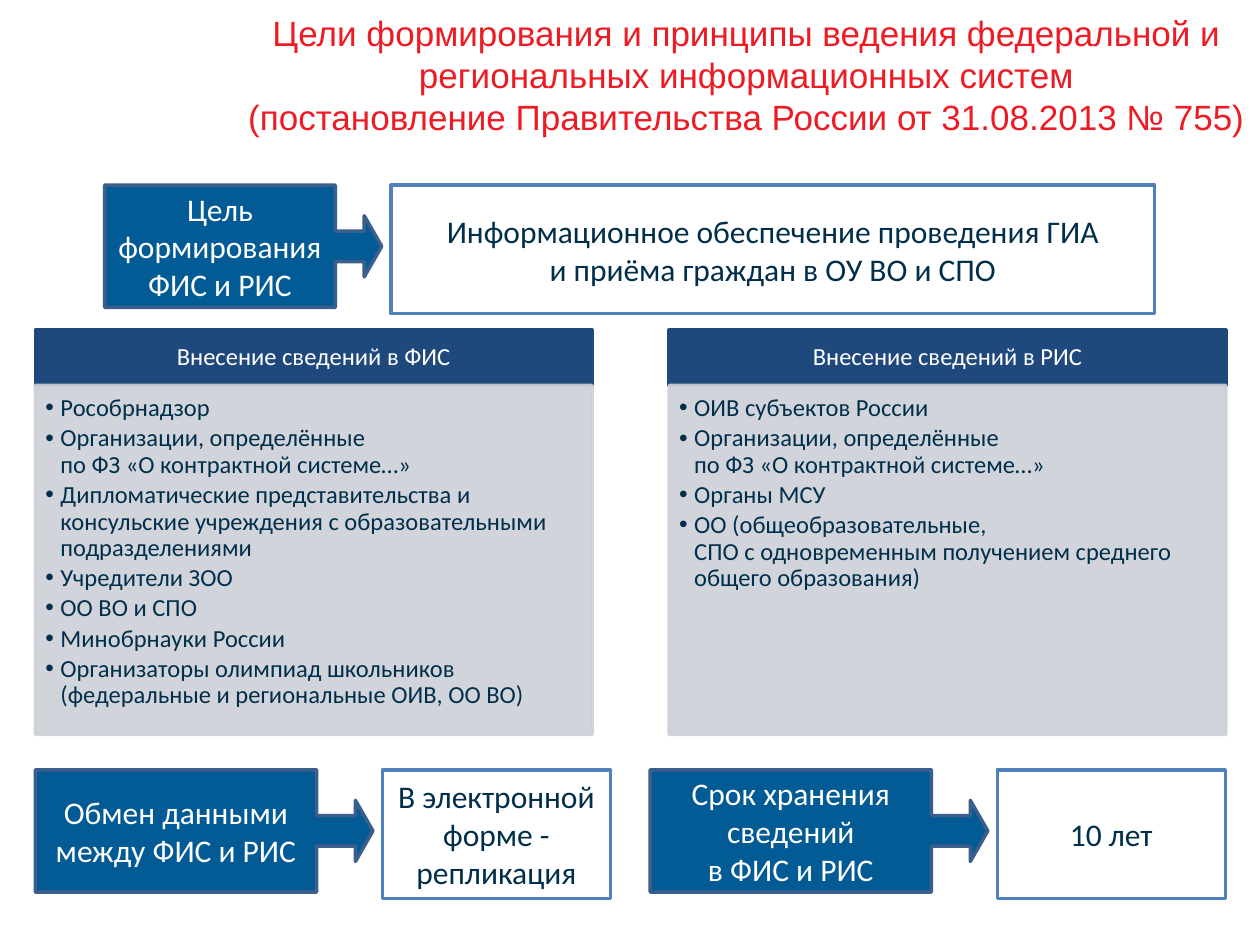
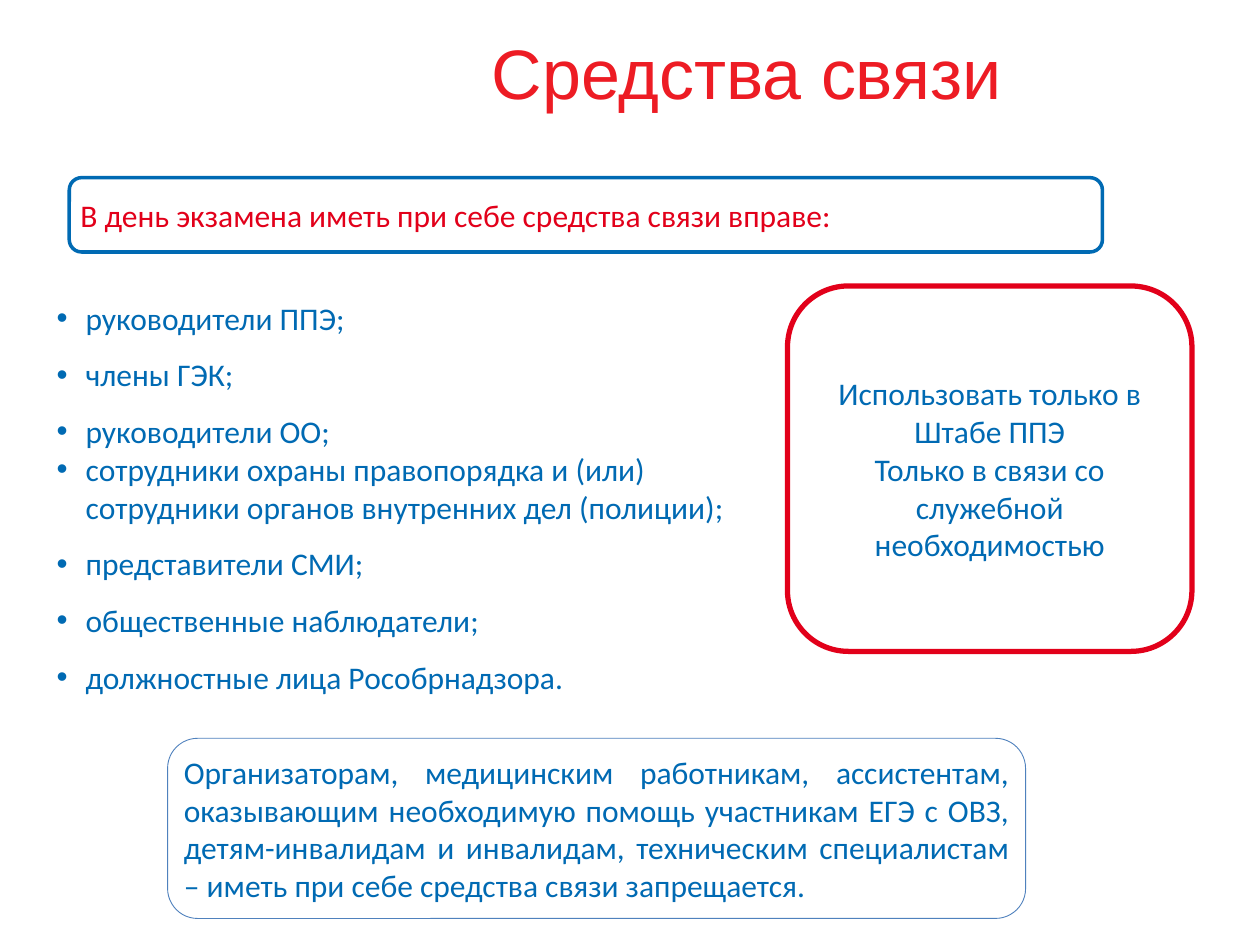
"""Build two slides on exam information systems and the use of phones."""
import copy

import pptx
import pptx.dml.color
import pptx.enum.shapes
import pptx.enum.text
import pptx.oxml.ns
import pptx.util
from lxml import etree

SHAPES = pptx.enum.shapes.MSO_SHAPE
ALIGN = pptx.enum.text.PP_ALIGN
ANCHOR = pptx.enum.text.MSO_ANCHOR
QN = pptx.oxml.ns.qn

RED = "ED1C24"
CRIMSON = "E2001A"
BLUE = "006AB3"
BORDER = "4F81BD"
INK = "012F4B"
WHITE = "FFFFFF"
CALLOUT = {"kind": SHAPES.RIGHT_ARROW_CALLOUT, "fill": "025B94", "line": "3A5F8C"}
ANSWER = {"fill": WHITE, "line": BORDER, "color": INK}
HEADER = {"fill": "1F497D", "line": "1F497D", "size": 14, "spacing": 0.9,
          "insets": (0.11, 0.06, 0.11, 0.06)}
LISTING = {"fill": "CDD0D7", "line": "CDD0D7", "opacity": 90, "color": INK, "size": 14,
           "spacing": 0.9, "after": 2.1, "bullet": 0.12, "align": ALIGN.LEFT,
           "anchor": ANCHOR.TOP, "insets": (0.08, 0.08, 0.11, 0.12)}
ROUNDED = {"kind": SHAPES.ROUNDED_RECTANGLE, "color": BLUE, "insets": (0.06, 0.03, 0.06, 0.03)}
TITLE = {"color": RED, "font": "Arial"}

presentation = pptx.Presentation()
presentation.slide_width = pptx.util.Inches(10)
presentation.slide_height = pptx.util.Inches(7.5)
COLUMN = ROW = presentation.slide_width / 100


def rgb(value):
    return pptx.dml.color.RGBColor.from_string(value)


def add_box(slide, left, top, width, height, paragraphs, kind=SHAPES.RECTANGLE, fill=None,
            line=None, weight=2, opacity=100, color=WHITE, size=18, font="Calibri",
            align=ALIGN.CENTER, anchor=ANCHOR.MIDDLE, insets=(0.1, 0.05, 0.1, 0.05),
            spacing=1, after=0, bullet=0):
    place = [round(left * COLUMN), round(top * ROW), round(width * COLUMN), round(height * ROW)]
    if fill or line:
        shape = slide.shapes.add_shape(kind, *place)
        shape.shadow.inherit = False
    else:
        shape = slide.shapes.add_textbox(*place)
    if fill:
        shape.fill.solid()
        shape.fill.fore_color.rgb = rgb(fill)
    else:
        shape.fill.background()
    if line:
        shape.line.color.rgb = rgb(line)
        shape.line.width = pptx.util.Pt(weight)
    if opacity < 100:
        for tint in shape._element.spPr.iter(QN("a:srgbClr")):
            etree.SubElement(tint, QN("a:alpha"), val=str(opacity * 1000))
    frame = shape.text_frame
    frame.word_wrap = True
    frame.vertical_anchor = anchor
    for side, inset in zip(("left", "top", "right", "bottom"), insets):
        setattr(frame, f"margin_{side}", pptx.util.Inches(inset))
    for index, text in enumerate(paragraphs):
        paragraph = frame.add_paragraph() if index else frame.paragraphs[0]
        paragraph.text = text
        if bullet:
            properties = paragraph._p.get_or_add_pPr()
            indent = pptx.util.Inches(bullet)
            properties.set("marL", str(indent))
            properties.set("indent", str(-indent))
            etree.SubElement(properties, QN("a:buFont"), typeface="Arial")
            etree.SubElement(properties, QN("a:buChar"), char="•")
        line_spacing = spacing[index] if isinstance(spacing, list) else spacing
        layout = {"alignment": align, "line_spacing": float(line_spacing),
                  "space_before": pptx.util.Pt(0), "space_after": pptx.util.Pt(after)}
        for name, value in layout.items():
            setattr(paragraph, name, value)
        for run in paragraph.runs:
            for name, value in {"name": font, "size": pptx.util.Pt(size)}.items():
                setattr(run.font, name, value)
            run.font.color.rgb = rgb(color)
        for line_break in paragraph._p.findall(QN("a:br")):
            line_break.append(copy.deepcopy(paragraph.runs[0]._r.rPr))
    return shape


blank = presentation.slide_layouts[6]
systems = presentation.slides.add_slide(blank)
add_box(systems, 18.5, 0, 81.5, 11.8, [
    "Цели формирования и принципы ведения федеральной и региональных информационных систем\n"
    "(постановление Правительства России от 31.08.2013 № 755)"], size=20, **TITLE)

facts = [
    (8.3, 14.7, 22, 60.6, "Цель формирования ФИС и РИС",
     "Информационное обеспечение проведения ГИА\nи приёма граждан в ОУ ВО и СПО"),
    (2.8, 61.1, 26.8, 18.1, "Обмен данными между ФИС и РИС", "В электронной форме - репликация"),
    (51.6, 61.1, 26.8, 18.1, "Срок хранения сведений\nв ФИС и РИС", "10 лет"),
]
for left, top, callout_width, answer_width, question, answer in facts:
    callout = add_box(systems, left, top, callout_width, 9.7, [question], **CALLOUT)
    for index, adjustment in enumerate((0.25, 0.25, 0.143, 0.833)):
        callout.adjustments[index] = adjustment
    add_box(systems, left + callout_width + 0.75, top, answer_width, 10.2, [answer], **ANSWER)

contributors = {
    "Внесение сведений в ФИС": [
        "Рособрнадзор",
        "Организации, определённые\nпо ФЗ «О контрактной системе…»",
        "Дипломатические представительства и консульские учреждения "
        "с образовательными подразделениями",
        "Учредители ЗОО",
        "ОО ВО и СПО",
        "Минобрнауки России",
        "Организаторы олимпиад школьников (федеральные и региональные ОИВ, ОО ВО)",
    ],
    "Внесение сведений в РИС": [
        "ОИВ субъектов России",
        "Организации, определённые\nпо ФЗ «О контрактной системе…»",
        "Органы МСУ",
        "ОО (общеобразовательные,\nСПО с одновременным получением среднего общего образования)",
    ],
}
for index, (heading, names) in enumerate(contributors.items()):
    left = 2.8 + index * 50.3
    add_box(systems, left, 26.2, 44.2, 4.4, [heading], **HEADER)
    add_box(systems, left, 30.6, 44.2, 27.7, names, **LISTING)

phones = presentation.slides.add_slide(blank)
add_box(phones, 18.9, -0.2, 80.7, 11.7, ["Средства связи"], size=40, **TITLE)
add_box(phones, 3.9, 21.9, 57.8, 33.9, [
    "руководители ППЭ;",
    "члены ГЭК;",
    "руководители ОО;",
    "сотрудники охраны правопорядка и (или) сотрудники органов внутренних дел (полиции);",
    "представители СМИ;",
    "общественные наблюдатели;",
    "должностные лица Рособрнадзора.",
], spacing=[1.5] * 3 + [1] + [1.5] * 3, bullet=0.23, align=ALIGN.LEFT, anchor=ANCHOR.TOP,
    color=BLUE, insets=ROUNDED["insets"])
add_box(phones, 62.5, 22.7, 32.1, 29, [
    "Использовать только в Штабе ППЭ",
    "Только в связи со служебной необходимостью"], line=CRIMSON, weight=3, **ROUNDED)
add_box(phones, 5.5, 14.1, 82, 5.9, ["В день экзамена иметь при себе средства связи вправе:"],
        line=BLUE, align=ALIGN.LEFT, **{**ROUNDED, "color": CRIMSON})
add_box(phones, 13.3, 58.6, 68.1, 14.3, [
    "Организаторам, медицинским работникам, ассистентам, оказывающим необходимую помощь "
    "участникам ЕГЭ с ОВЗ, детям-инвалидам и инвалидам, техническим специалистам "
    "– иметь при себе средства связи запрещается."],
    line=BORDER, weight=0.5, align=ALIGN.JUSTIFY, **ROUNDED)

presentation.save("out.pptx")
